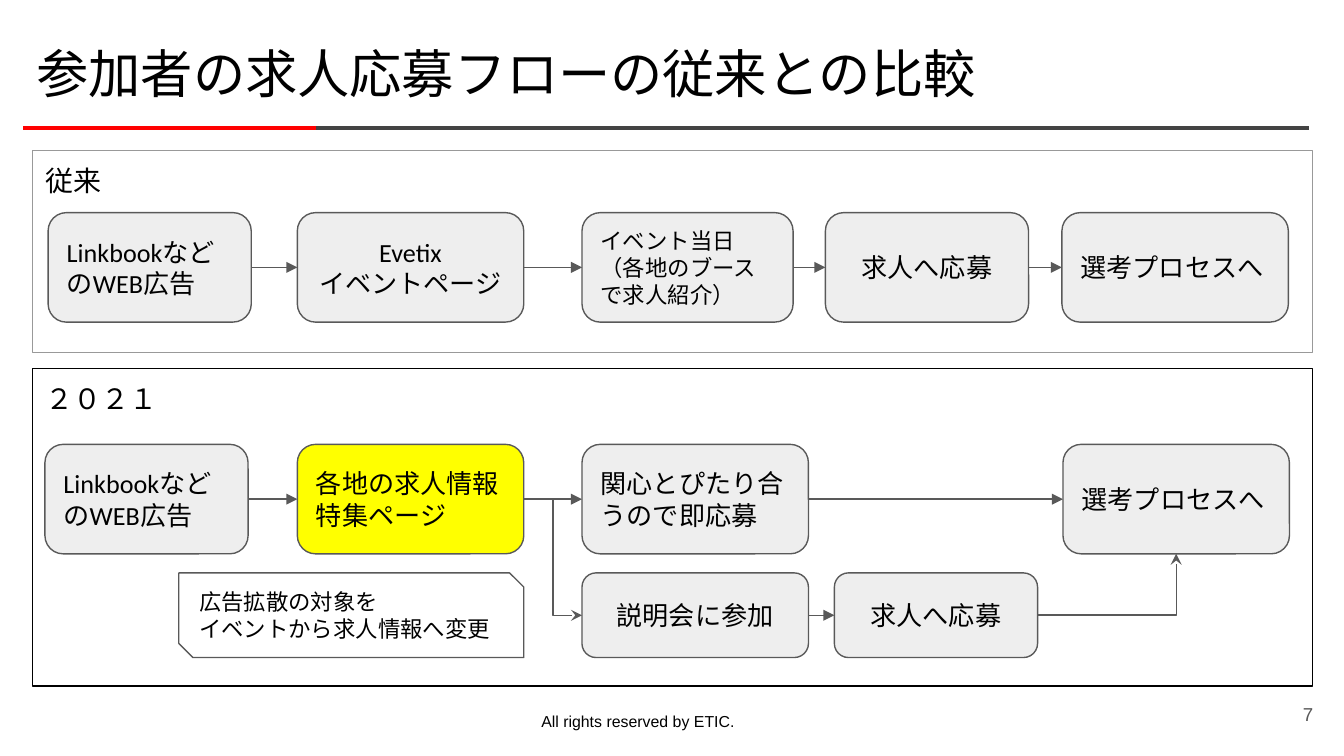
"""Builds the slide comparing the earlier and the 2021 application flow."""
import pptx
import pptx.dml.color
import pptx.enum.shapes
import pptx.enum.text
import pptx.oxml.ns
import pptx.util
from lxml import etree

Cm = pptx.util.Cm
Pt = pptx.util.Pt
RGBColor = pptx.dml.color.RGBColor
SHAPE = pptx.enum.shapes.MSO_SHAPE
CONNECTOR = pptx.enum.shapes.MSO_CONNECTOR
ANCHOR = pptx.enum.text.MSO_ANCHOR
ALIGN = pptx.enum.text.PP_ALIGN
qn = pptx.oxml.ns.qn

BLACK = RGBColor(0x00, 0x00, 0x00)
WHITE = RGBColor(0xFF, 0xFF, 0xFF)
RED = RGBColor(0xFF, 0x00, 0x00)
YELLOW = RGBColor(0xFF, 0xFF, 0x00)
CHARCOAL = RGBColor(0x43, 0x43, 0x43)
GREY = RGBColor(0x59, 0x59, 0x59)
SILVER = RGBColor(0x99, 0x99, 0x99)
PALE = RGBColor(0xEE, 0xEE, 0xEE)

TOP, LEFT, BOTTOM, RIGHT = range(4)
NARROW, WIDE = 3.84, 4.28
TALL, SHORT = 2.07, 1.6
OLD_ROW, NEW_ROW, BRANCH_ROW = 4.02, 8.4, 10.83


class FlowSlide:
    """Holds the style and the current slide."""

    inset = Cm(0.25)
    hairline = Pt(0.75)

    def __init__(self, slide):
        self.slide = slide

    def set_text(self, shape, text, size, font="Calibri", color=BLACK,
                 align=ALIGN.LEFT, anchor=ANCHOR.TOP):
        frame = shape.text_frame
        frame.word_wrap = True
        frame.auto_size = pptx.enum.text.MSO_AUTO_SIZE.NONE
        frame.vertical_anchor = anchor
        frame.margin_left = frame.margin_right = self.inset
        frame.margin_top = frame.margin_bottom = self.inset
        paragraph = frame.paragraphs[0]
        paragraph.text = text
        paragraph.alignment = align
        for run in paragraph.runs:
            run.font.size = Pt(size)
            run.font.name = font
            run.font.color.rgb = color

    def title(self, text, left, top, width, height):
        heading = self.slide.shapes.title
        heading.left, heading.top = Cm(left), Cm(top)
        heading.width, heading.height = Cm(width), Cm(height)
        self.set_text(heading, text, 28, "Arial")

    def label(self, text, left, top, width, height, size, **style):
        box = self.slide.shapes.add_textbox(Cm(left), Cm(top), Cm(width), Cm(height))
        self.set_text(box, text, size, "Arial", **style)

    def block(self, preset, text, left, top, width, height, size,
              fill=None, outline=GREY, **style):
        shape = self.slide.shapes.add_shape(
            preset, Cm(left), Cm(top), Cm(width), Cm(height))
        shape.shadow.inherit = False
        if fill is None:
            shape.fill.background()
        else:
            shape.fill.solid()
            shape.fill.fore_color.rgb = fill
        shape.line.color.rgb = outline
        shape.line.width = self.hairline
        self.set_text(shape, text, size, **style)
        return shape

    def step(self, text, left, top, width, height=TALL, size=14, fill=PALE,
             align=ALIGN.LEFT):
        return self.block(SHAPE.ROUNDED_RECTANGLE, text, left, top, width, height,
                          size, fill, align=align, anchor=ANCHOR.MIDDLE)

    def line(self, kind, start, end, color, width):
        connector = self.slide.shapes.add_connector(
            kind, *(Cm(length) for length in start + end))
        connector.line.color.rgb = color
        connector.line.width = width
        etree.SubElement(connector._element.spPr, qn("a:effectLst"))
        return connector

    def arrow(self, source, target, kind=CONNECTOR.STRAIGHT, head="triangle",
              side=LEFT):
        connector = self.line(kind, (0, 0), (1, 1), GREY, self.hairline)
        connector.begin_connect(source, RIGHT)
        connector.end_connect(target, side)
        properties = connector._element.spPr
        etree.SubElement(properties.find(qn("a:ln")), qn("a:tailEnd"), type=head)
        if side == BOTTOM:
            properties.find(qn("a:prstGeom")).set("prst", "bentConnector2")

    def chain(self, steps):
        for source, target in zip(steps, steps[1:]):
            self.arrow(source, target)


def main():
    deck = pptx.Presentation()
    deck.slide_width, deck.slide_height = Cm(25.4), Cm(14.29)
    flow = FlowSlide(deck.slides.add_slide(deck.slide_layouts[5]))

    flow.line(CONNECTOR.STRAIGHT, (0.44, 2.42), (8.56, 2.42), RED, Pt(2.25))
    flow.line(CONNECTOR.STRAIGHT, (5.97, 2.42), (24.74, 2.42), CHARCOAL, Pt(2.25))
    flow.title("参加者の求人応募フローの従来との比較", 0.44, 0.53, 23.67, 1.6)
    flow.label("All rights reserved by ETIC.", 9.98, 13.2, 8.2, 0.89, 8.5)
    flow.label("7", 23.55, 12.95, 1.52, 1.09, 10, color=GREY,
               align=ALIGN.RIGHT, anchor=ANCHOR.MIDDLE)

    flow.block(SHAPE.RECTANGLE, "従来", 0.61, 2.85, 24.2, 3.82, 15, outline=SILVER)
    flow.block(SHAPE.RECTANGLE, "２０２１", 0.61, 6.97, 24.2, 6, 15, outline=BLACK)

    advert = "LinkbookなどのWEB広告"
    flow.chain([
        flow.step(advert, 0.91, OLD_ROW, NARROW),
        flow.step("Evetix\nイベントページ", 5.62, OLD_ROW, WIDE, align=ALIGN.CENTER),
        flow.step("イベント当日\n（各地のブースで求人紹介）", 11, OLD_ROW, 3.99, size=12),
        flow.step("求人へ応募", 15.6, OLD_ROW, NARROW, align=ALIGN.CENTER),
        flow.step("選考プロセスへ", 20.07, OLD_ROW, WIDE),
    ])

    feature = flow.step("各地の求人情報特集ページ", 5.62, NEW_ROW, WIDE, fill=YELLOW)
    selection = flow.step("選考プロセスへ", 20.09, NEW_ROW, WIDE)
    flow.chain([
        flow.step(advert, 0.85, NEW_ROW, NARROW),
        feature,
        flow.step("関心とぴたり合うので即応募", 11, NEW_ROW, WIDE),
        selection,
    ])

    briefing = flow.step("説明会に参加", 11, BRANCH_ROW, WIDE, SHORT, align=ALIGN.CENTER)
    application = flow.step("求人へ応募", 15.77, BRANCH_ROW, NARROW, SHORT,
                            align=ALIGN.CENTER)
    flow.arrow(briefing, application)
    flow.arrow(feature, briefing, CONNECTOR.ELBOW, "stealth")
    flow.arrow(application, selection, CONNECTOR.ELBOW, "stealth", BOTTOM)

    change = flow.block(SHAPE.SNIP_2_DIAG_RECTANGLE,
                        "広告拡散の対象を\nイベントから求人情報へ変更",
                        3.38, BRANCH_ROW, 6.52, SHORT, 12, WHITE,
                        font="Arial", anchor=ANCHOR.MIDDLE)
    change.adjustments[0], change.adjustments[1] = 0, 0.167

    deck.save("out.pptx")


if __name__ == "__main__":
    main()
